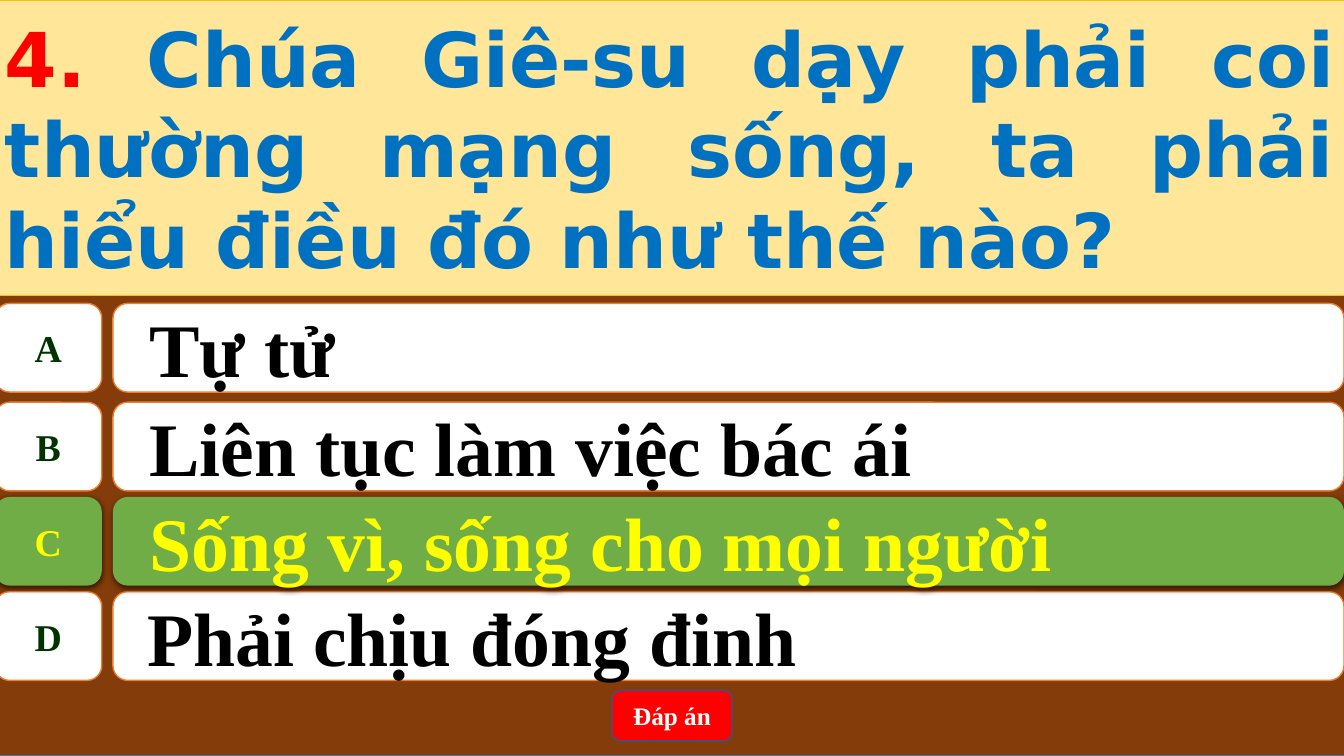
from dataclasses import dataclass

from lxml import etree
from pptx import Presentation
from pptx import util as u
from pptx.dml.color import RGBColor
from pptx.enum import shapes, text
from pptx.oxml.ns import qn

PX = 9144  # 100 px to the inch

BROWN = RGBColor(0x84, 0x3C, 0x0B)
STEEL = RGBColor(0x43, 0x73, 0x9E)
CREAM = RGBColor(0xFF, 0xE6, 0x99)
GOLD = RGBColor(0xFF, 0xC0, 0x00)
WHITE = RGBColor(0xFF, 0xFF, 0xFF)
ORANGE = RGBColor(0xED, 0x7D, 0x31)
GREEN = RGBColor(0x70, 0xAD, 0x47)
FOREST = RGBColor(0x00, 0x33, 0x00)
BLACK = RGBColor(0x00, 0x00, 0x00)
YELLOW = RGBColor(0xFF, 0xFF, 0x00)
RED = RGBColor(0xFF, 0x00, 0x00)
BLUE = RGBColor(0x00, 0x70, 0xC0)
NAVY = RGBColor(0x32, 0x54, 0x91)

SERIF = "Times New Roman"
SANS = "DejaVu Sans"
KIND = shapes.MSO_SHAPE
ALIGN = text.PP_ALIGN

LEFT, WIDE = -5, 1339
TAG_W, BAR_X, BAR_W, ROW_H = 106, 112, 1221, 88


@dataclass
class Box:
    left: int
    top: int
    width: int
    height: int


@dataclass
class Answer:
    letter: str
    words: str
    top: int
    margin: int = 50
    indent: int = -28
    right: bool = False


# The right answer comes last, so that its shadow lies over its neighbours.
ANSWERS = [
    Answer("A", "Tự tử", 301),
    Answer("B", "Liên tục làm việc bác ái", 399),
    Answer("D", "Phải chịu đóng đinh", 587, margin=20, indent=0),
    Answer("C", "Sống vì, sống cho mọi người", 493, right=True),
]


def add_box(slide, kind: KIND, box: Box, fill: RGBColor,
            line: RGBColor | None, weight: float = 1):
    shape = slide.shapes.add_shape(kind, box.left * PX, box.top * PX,
                                   box.width * PX, box.height * PX)
    shape.shadow.inherit = False
    shape.fill.solid()
    shape.fill.fore_color.rgb = fill
    if line is None:
        shape.line.fill.background()
    else:
        shape.line.color.rgb = line
        shape.line.width = u.Pt(weight)
    return shape


def write(shape, words: str, size: int, color: RGBColor,
          align: ALIGN = ALIGN.CENTER, face: str = SERIF, wrap: bool = True):
    frame = shape.text_frame
    frame.word_wrap = wrap
    frame.vertical_anchor = text.MSO_ANCHOR.MIDDLE
    para = frame.paragraphs[0]
    para.alignment = align
    para.add_run().text = words
    para.font.name = face
    para.font.size = u.Pt(size)
    para.font.bold = True
    para.font.color.rgb = color
    return para


def add_shadow(shape) -> None:
    effects = shape._element.spPr.find(qn("a:effectLst"))
    shadow = etree.SubElement(effects, qn("a:outerShdw"), blurRad="57150",
                              dist="19050", dir="5400000", algn="ctr",
                              rotWithShape="0")
    color = etree.SubElement(shadow, qn("a:srgbClr"), val=str(BLACK))
    etree.SubElement(color, qn("a:alpha"), val="63000")


def add_answer(slide, answer: Answer) -> None:
    fill, line = (GREEN, None) if answer.right else (WHITE, ORANGE)
    bar = add_box(slide, KIND.ROUNDED_RECTANGLE,
                  Box(BAR_X, answer.top, BAR_W, ROW_H), fill, line)
    para = write(bar, answer.words, 54, YELLOW if answer.right else BLACK,
                 ALIGN.LEFT)
    props = para._p.get_or_add_pPr()
    props.set("marL", str(answer.margin * PX))
    props.set("indent", str(answer.indent * PX))

    tag = add_box(slide, KIND.FLOWCHART_ALTERNATE_PROCESS,
                  Box(LEFT, answer.top, TAG_W, ROW_H), fill, line)
    write(tag, answer.letter, 27, YELLOW if answer.right else FOREST,
          wrap=False)
    if answer.right:
        add_shadow(bar)
        add_shadow(tag)


def add_question(slide) -> None:
    panel = add_box(slide, KIND.RECTANGLE, Box(LEFT, 0, WIDE, 293),
                    CREAM, GOLD, 0.5)
    para = write(panel, "4. ", 54, BLUE, ALIGN.JUSTIFY, SANS)
    para.runs[0].font.color.rgb = RED
    para.add_run().text = ("Chúa Giê-su dạy phải coi thường mạng sống, "
                           "ta phải hiểu điều đó như thế nào?")


def main() -> None:
    deck = Presentation()
    deck.slide_width, deck.slide_height = 1333 * PX, 750 * PX
    slide = deck.slides.add_slide(deck.slide_layouts[6])

    add_box(slide, KIND.RECTANGLE, Box(LEFT, 0, WIDE, 750), BROWN, STEEL)
    button = add_box(slide, KIND.ROUNDED_RECTANGLE, Box(607, 685, 119, 50),
                     RED, NAVY)
    write(button, "Đáp án", 18, WHITE)
    add_question(slide)
    for answer in ANSWERS:
        add_answer(slide, answer)

    deck.save("out.pptx")


if __name__ == "__main__":
    main()
